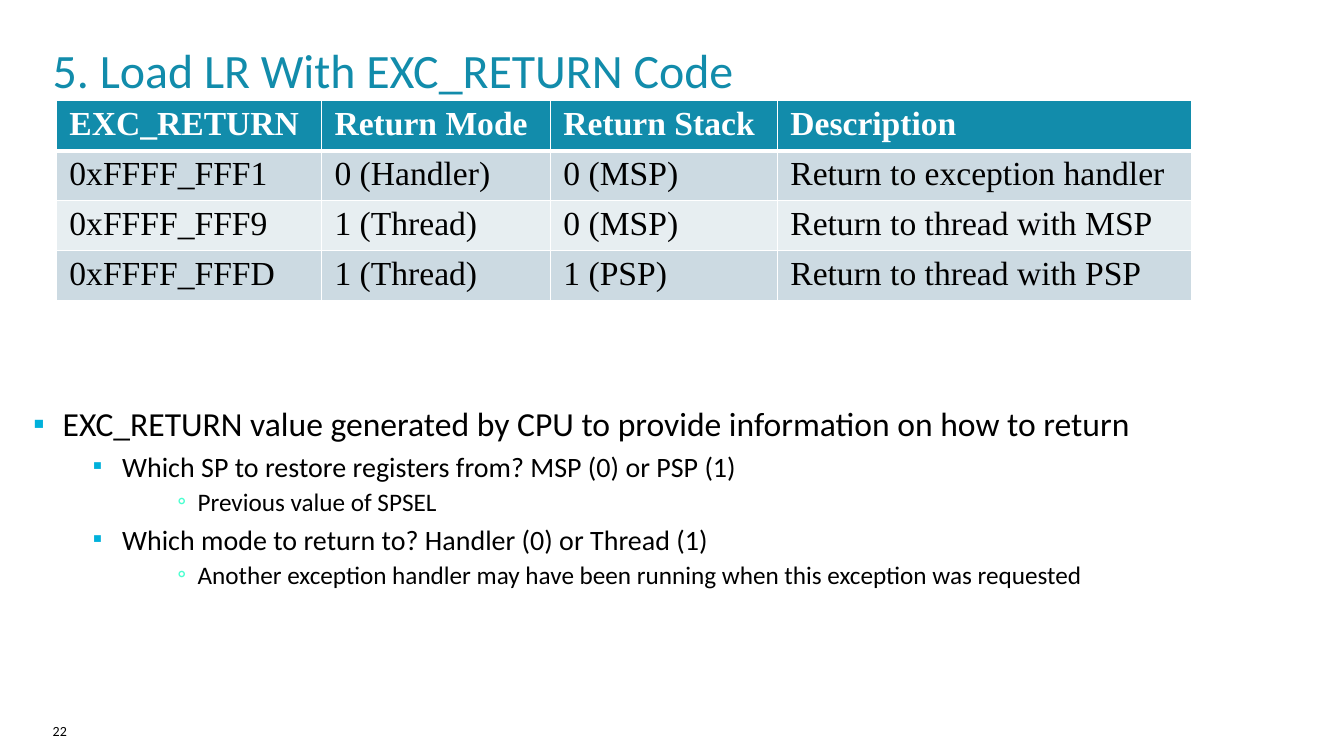
from lxml.etree import SubElement
from pptx import Presentation
from pptx.dml.color import RGBColor
from pptx.enum.text import MSO_ANCHOR
from pptx.oxml.ns import qn
from pptx.util import Cm, Pt

TITLE = "5. Load LR With EXC_RETURN Code"
PAGE_NUMBER = "22"
RETURN_CODES = [
    ("EXC_RETURN", "Return Mode", "Return Stack", "Description"),
    ("0xFFFF_FFF1", "0 (Handler)", "0 (MSP)", "Return to exception handler"),
    ("0xFFFF_FFF9", "1 (Thread)", "0 (MSP)", "Return to thread with MSP"),
    ("0xFFFF_FFFD", "1 (Thread)", "1 (PSP)", "Return to thread with PSP"),
]
COLUMN_WIDTHS = [6.68, 5.77, 5.72, 10.44]
ROW_HEIGHT = 1.03
BULLETS = [
    (0, "EXC_RETURN value generated by CPU to provide information on how to return"),
    (1, "Which SP to restore registers from? MSP (0) or PSP (1)"),
    (2, "Previous value of SPSEL"),
    (1, "Which mode to return to? Handler (0) or Thread (1)"),
    (2, "Another exception handler may have been running when this exception was requested"),
]
# Per level: indent and hanging (cm), font size, space before, mark, mark colour, mark size (%)
LEVELS = [
    (0.74, 0.74, 24, 4, "▪", "00B1DB", 95),
    (2.24, 0.74, 20, 4, "▪", "00B1DB", 95),
    (4.14, 0.51, 18, 2.5, "◦", "4AFFD0", 100),
]
TEAL, BLACK, WHITE = "128CAB", "000000", "FFFFFF"
BAND_FILLS = ["CCDAE2", "E7EEF1"]


def color(hex_string):
    return RGBColor.from_string(hex_string)


def set_font(para, name, size, hex_string, bold=False):
    font = para.font
    font.name, font.size, font.bold = name, Pt(size), bold
    font.color.rgb = color(hex_string)


def add_text_frame(page, left, top, width, height, anchor=MSO_ANCHOR.TOP):
    box = page.shapes.add_textbox(Cm(left), Cm(top), Cm(width), Cm(height))
    frame = box.text_frame
    frame.word_wrap = True
    frame.vertical_anchor = anchor
    frame.margin_left = frame.margin_top = frame.margin_right = frame.margin_bottom = 0
    return frame


def add_line(page, text, size, hex_string, *place):
    """Add a text box that holds one paragraph."""
    para = add_text_frame(page, *place).paragraphs[0]
    para.text = text
    set_font(para, "Calibri", size, hex_string)


def set_bullet(para, indent, hanging, mark, hex_string, percent):
    properties = para._p.get_or_add_pPr()
    properties.set("marL", str(Cm(indent)))
    properties.set("indent", str(-Cm(hanging)))
    bullet_color = SubElement(properties, qn("a:buClr"))
    SubElement(bullet_color, qn("a:srgbClr"), val=hex_string)
    SubElement(properties, qn("a:buSzPct"), val=str(percent * 1000))
    SubElement(properties, qn("a:buFont"), typeface="Calibri")
    SubElement(properties, qn("a:buChar"), char=mark)


def set_borders(cell, top, bottom):
    """Draw white borders, with the top and bottom widths in points."""
    properties = cell._tc.get_or_add_tcPr()
    for position, (side, width) in enumerate(
            [("lnL", 1), ("lnR", 1), ("lnT", top), ("lnB", bottom)]):
        line = SubElement(properties, qn(f"a:{side}"), w=str(Pt(width)))
        fill = SubElement(line, qn("a:solidFill"))
        SubElement(fill, qn("a:srgbClr"), val=WHITE)
        properties.insert(position, line)


def add_return_table(page):
    row_count = len(RETURN_CODES)
    table = page.shapes.add_table(
        row_count, len(COLUMN_WIDTHS), Cm(1.43), Cm(2.54),
        Cm(sum(COLUMN_WIDTHS)), Cm(ROW_HEIGHT * row_count)).table
    for column, width in zip(table.columns, COLUMN_WIDTHS):
        column.width = Cm(width)
    for row_index, texts in enumerate(RETURN_CODES):
        header = row_index == 0
        table.rows[row_index].height = Cm(ROW_HEIGHT)
        for column_index, text in enumerate(texts):
            cell = table.cell(row_index, column_index)
            cell.margin_left = cell.margin_right = Cm(0.32)
            cell.margin_top = cell.margin_bottom = Cm(0.12)
            cell.fill.solid()
            cell.fill.fore_color.rgb = color(TEAL if header else BAND_FILLS[(row_index - 1) % 2])
            set_borders(cell, 3 if row_index == 1 else 1, 3 if header else 1)
            para = cell.text_frame.paragraphs[0]
            para.text = text
            set_font(para, "Times New Roman", 24, WHITE if header else BLACK, header)


def add_bullets(page):
    frame = add_text_frame(page, 0.84, 10.16, 32.5, 8.89)
    for index, (level, text) in enumerate(BULLETS):
        indent, hanging, size, before, mark, mark_color, percent = LEVELS[level]
        para = frame.add_paragraph() if index else frame.paragraphs[0]
        para.text = text
        para.space_before = Pt(before if index else 0)
        set_bullet(para, indent, hanging, mark, mark_color, percent)
        set_font(para, "Calibri", size, BLACK)


def main():
    deck = Presentation()
    deck.slide_width, deck.slide_height = Cm(33.87), Cm(19.05)
    page = deck.slides.add_slide(deck.slide_layouts[6])
    add_line(page, PAGE_NUMBER, 10, BLACK, 1.33, 18.21, 3.6, 0.66)
    add_line(page, TITLE, 34.2, TEAL, 1.33, 0.94, 31, 1.6, MSO_ANCHOR.MIDDLE)
    add_bullets(page)
    add_return_table(page)
    deck.save("out.pptx")


if __name__ == "__main__":
    main()
